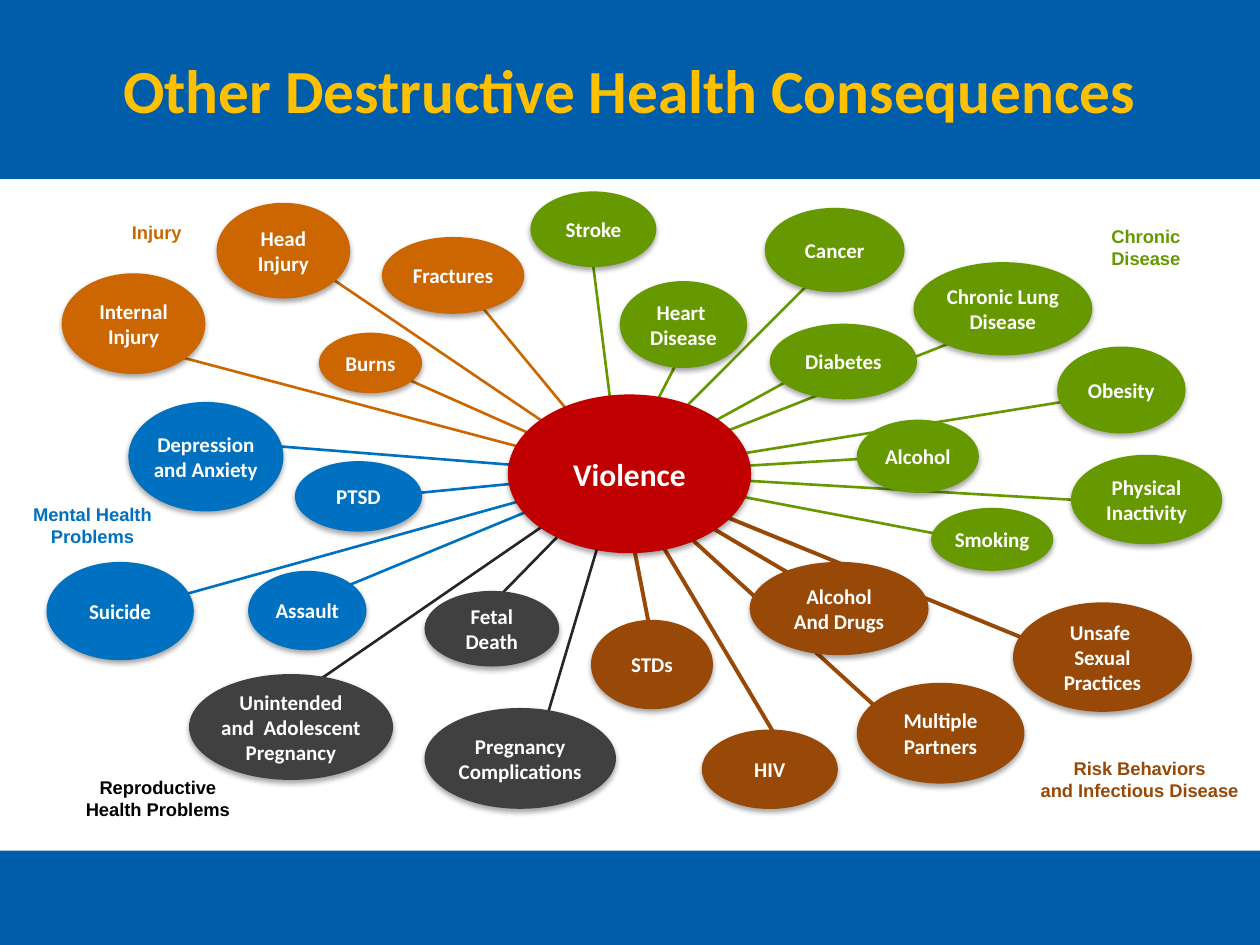
from lxml.etree import SubElement
from pptx import Presentation
from pptx.dml.color import RGBColor
from pptx.enum.shapes import MSO_CONNECTOR as Link, MSO_SHAPE as Kind
from pptx.enum.text import MSO_ANCHOR as Anchor, PP_ALIGN as Align
from pptx.oxml.ns import qn
from pptx.util import Pt

WIDE, HIGH = 720, 540
BLUE, GOLD, RED, WHITE = "005DAA", "FFC000", "C00000", "FFFFFF"
TITLE = "Other Destructive Health Consequences"
BANDS = [(0, 486, WIDE, 54), (0, 0, WIDE, 102.2)]
HUB = (354, 270.5)
CORE = ("Violence", (290.2, 225.4, 139, 90.7))

# Each node: text, oval box, end of its spoke
GROUPS = [
    {"name": "Reproductive\nHealth Problems", "box": (30.2, 439.9, 120.2, 32.4),
     "ink": "000000", "fill": "404040", "line": "262626", "width": 1.5,
     "nodes": [
         ("Pregnancy\nComplications", (242.6, 404.6, 109.4, 57.6), (308.2, 424.1)),
         ("Unintended\nand  Adolescent\nPregnancy", (108, 385.2, 116.6, 60.5), (180, 390.2)),
         ("Fetal\nDeath", (242.6, 337.7, 77, 43.2), (268.6, 357.8)),
     ]},
    {"name": "Chronic\nDisease", "box": (594.7, 125.3, 120.2, 32.4),
     "ink": "669900", "fill": "669900", "line": "669900", "width": 1.5,
     "nodes": [
         ("Chronic Lung\nDisease", (522, 149.8, 102.2, 53.3), (571, 185)),
         ("Cancer", (437, 118.8, 79.9, 48.2), (470.9, 153.4)),
         ("Diabetes", (439.9, 185, 84.2, 43.2), (463.7, 210.2)),
         ("Heart \nDisease", (354.2, 160.6, 72.7, 49.7), (393.1, 195.1)),
         ("Stroke", (303.1, 109.4, 72, 43.2), (339.1, 152.6)),
         ("Alcohol", (489.6, 239.8, 69.8, 41.8), (519.1, 260.6)),
         ("Smoking", (532.1, 290.2, 69.8, 36), (566.6, 311)),
         ("Obesity", (604.1, 198, 73.4, 49.7), (629.3, 226.1)),
         ("Physical\nInactivity", (612, 259.9, 86.4, 51.1), (654.5, 288)),
     ]},
    {"name": "Risk Behaviors\nand Infectious Disease", "box": (578.9, 429.1, 144.7, 32.4),
     "ink": "984807", "fill": "984807", "line": "984807", "width": 2.25,
     "nodes": [
         ("HIV", (401, 416.9, 77.8, 45.4), (450, 432)),
         ("STDs", (337.7, 354.2, 69.8, 51.1), (375.1, 378.7)),
         ("Alcohol\nAnd Drugs", (428.4, 321.1, 102.2, 53.3), (468, 337.7)),
         ("Unsafe \nSexual Practices", (578.9, 344.2, 102.2, 62.6), (612, 375.8)),
         ("Multiple Partners", (489.6, 390.2, 95.8, 57.6), (517, 419)),
     ]},
    {"name": "Injury", "box": (29.5, 123.1, 120.2, 20.2),
     "ink": "CC6600", "fill": "CC6600", "line": "CC6600", "width": 1.5,
     "nodes": [
         ("Fractures", (218.2, 135.4, 81.4, 43.9), (261.4, 158.4)),
         ("Burns", (182.2, 190.1, 59, 34.6), (218.2, 210.2)),
         ("Internal Injury", (35.3, 156.2, 82.1, 57.6), (91.4, 200.9)),
         ("Head Injury", (123.8, 115.9, 76.3, 54.7), (175.7, 149.8)),
     ]},
    {"name": "Mental Health\nProblems", "box": (-7.2, 283.7, 120.2, 32.4),
     "ink": "0070C0", "fill": "0070C0", "line": "0070C0", "width": 1.5,
     "nodes": [
         ("Suicide", (26.6, 321.1, 84.2, 56.2), (89.3, 344.2)),
         ("Depression and Anxiety", (73.4, 229.7, 88.6, 62.6), (121, 252)),
         ("PTSD", (168.5, 263.5, 72.7, 40.3), (218.2, 283.7)),
         ("Assault", (141.8, 326.2, 67.7, 45.4), (175.7, 344.2)),
     ]},
]


def color(code):
    return RGBColor.from_string(code)


def points(values):
    return [Pt(value) for value in values]


def write(shape, text, face, size, ink, anchor=Anchor.MIDDLE):
    frame = shape.text_frame
    frame.word_wrap = True
    frame.vertical_anchor = anchor
    frame.text = text
    for para in frame.paragraphs:
        para.alignment = Align.CENTER
        font = para.font
        font.name, font.size, font.bold = face, Pt(size), True
        font.color.rgb = color(ink)


def add_label(shapes, box, *style):
    write(shapes.add_textbox(*points(box)), *style)


def add_solid(shapes, kind, box, fill):
    shape = shapes.add_shape(kind, *points(box))
    shape.shadow.inherit = False
    shape.fill.solid()
    shape.fill.fore_color.rgb = color(fill)
    shape.line.fill.background()
    return shape


def add_oval(shapes, text, box, fill, size=12):
    oval = add_solid(shapes, Kind.OVAL, box, fill)
    oval.text_frame.margin_left = oval.text_frame.margin_right = 0
    write(oval, text, "Calibri", size, WHITE)
    effects = oval.element.spPr.find(qn("a:effectLst"))
    shade = SubElement(effects, qn("a:outerShdw"), blurRad=str(Pt(3.1)),
                       dist=str(Pt(1.8)), dir="5400000", rotWithShape="0")
    tone = SubElement(shade, qn("a:srgbClr"), val="000000")
    SubElement(tone, qn("a:alpha"), val="35000")


def add_spoke(shapes, end, ink, width):
    spoke = shapes.add_connector(Link.STRAIGHT, *points(HUB + end))
    spoke.line.color.rgb = color(ink)
    spoke.line.width = Pt(width)
    SubElement(spoke.element.spPr, qn("a:effectLst"))


def main():
    deck = Presentation()
    deck.slide_width, deck.slide_height = points((WIDE, HIGH))
    shapes = deck.slides.add_slide(deck.slide_layouts[6]).shapes
    for band in BANDS:
        add_solid(shapes, Kind.RECTANGLE, band, BLUE)
    add_label(shapes, (0, 5.8, WIDE, 90), TITLE, "Calibri", 35, GOLD)
    for group in GROUPS:
        for _, _, end in group["nodes"]:
            add_spoke(shapes, end, group["line"], group["width"])
        for text, box, _ in group["nodes"]:
            add_oval(shapes, text, box, group["fill"])
        add_label(shapes, group["box"], group["name"], "Arial", 10.5,
                  group["ink"], Anchor.TOP)
    add_oval(shapes, *CORE, RED, 18)
    deck.save("out.pptx")


if __name__ == "__main__":
    main()
